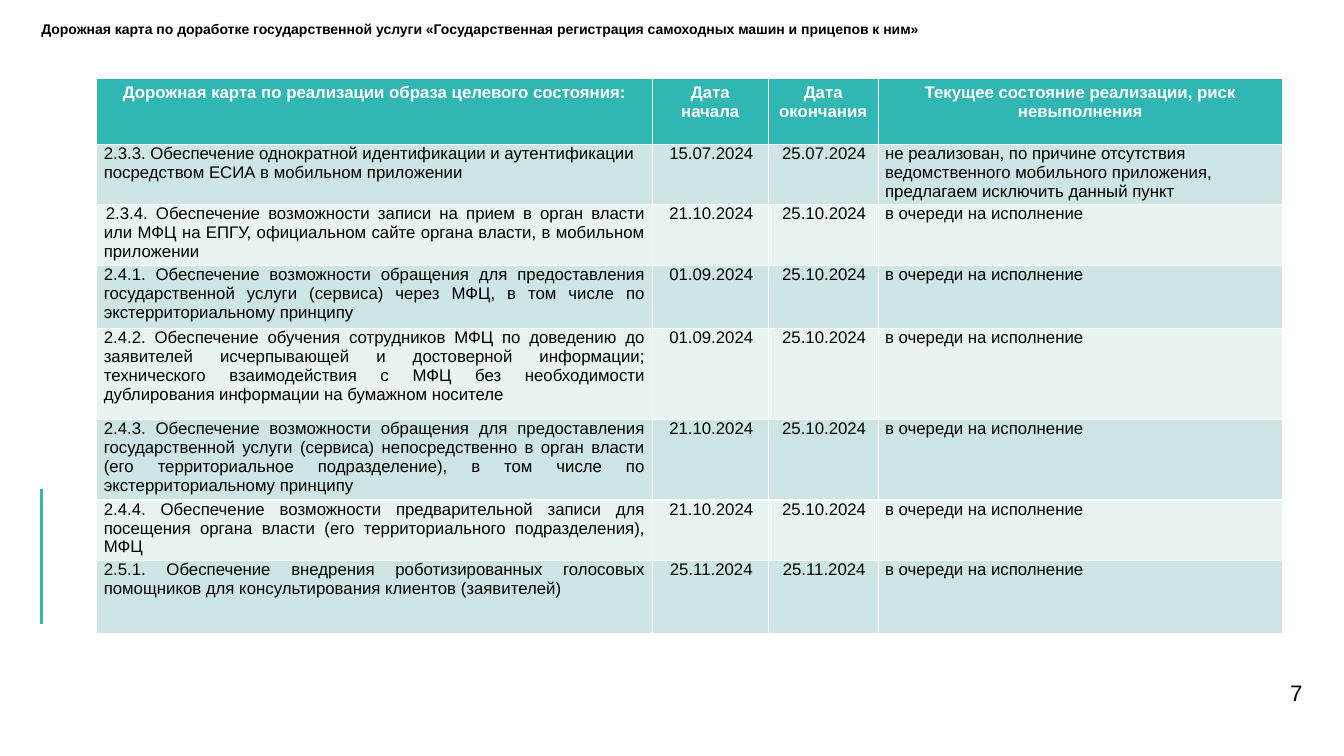
from dataclasses import dataclass

from lxml.etree import SubElement
from pptx import Presentation
from pptx.dml.color import RGBColor
from pptx.enum.shapes import MSO_CONNECTOR
from pptx.enum.text import MSO_ANCHOR, PP_ALIGN
from pptx.oxml.ns import qn
from pptx.util import Inches, Pt


@dataclass(frozen=True)
class Theme:
    font: str = "Arial"
    teal: str = "30B6B3"
    bands: tuple = ("CDE5E5", "E8F3F2")
    dark: str = "000000"
    light: str = "FFFFFF"
    title: int = 10
    table: int = 12
    number: int = 16


THEME = Theme()


def style(par, size, color, bold=False, align=PP_ALIGN.LEFT):
    par.alignment = align
    for run in par.runs:
        run.font.name = THEME.font
        run.font.size = Pt(size)
        run.font.bold = bold
        run.font.color.rgb = RGBColor.from_string(color)


def clear_margins(box):
    box.margin_left = box.margin_right = 0
    box.margin_top = box.margin_bottom = 0


deck = Presentation()
deck.slide_width, deck.slide_height = Inches(13.33), Inches(7.5)
slide = deck.slides.add_slide(deck.slide_layouts[5])

# Title
title = slide.shapes.title
title.left, title.top = Inches(0.41), Inches(0.22)
title.width, title.height = Inches(11.05), Inches(0.39)
frame = title.text_frame
frame.text = ("Дорожная карта по доработке государственной услуги "
              "«Государственная регистрация самоходных машин и прицепов к ним»")
frame.word_wrap = True
frame.vertical_anchor = MSO_ANCHOR.TOP
clear_margins(frame)
frame.paragraphs[0].line_spacing = 0.9
style(frame.paragraphs[0], THEME.title, THEME.dark, bold=True)

# Slide number
number = slide.shapes.add_textbox(Inches(11.86), Inches(6.66), Inches(1.06), Inches(0.43))
frame = number.text_frame
frame.text = "7"
frame.word_wrap = True
frame.vertical_anchor = MSO_ANCHOR.MIDDLE
clear_margins(frame)
style(frame.paragraphs[0], THEME.number, THEME.dark, align=PP_ALIGN.RIGHT)

# Accent line
accent = slide.shapes.add_connector(
    MSO_CONNECTOR.STRAIGHT, Inches(0.41), Inches(4.85), Inches(0.41), Inches(6.19))
accent.line.color.rgb = RGBColor.from_string(THEME.teal)
accent.line.width = Pt(2.25)
SubElement(accent._element.spPr, qn("a:effectLst"))

# Road map table
QUEUED = "в очереди на исполнение"
HEADS = ("Дорожная карта по реализации образа целевого состояния:",
         "Дата\nначала", "Дата окончания",
         "Текущее состояние реализации, риск невыполнения")
STEPS = (
    ("2.3.3. Обеспечение однократной идентификации и аутентификации посредством "
     "ЕСИА в мобильном приложении", "15.07.2024", "25.07.2024",
     "не реализован, по причине отсутствия ведомственного мобильного приложения, "
     "предлагаем исключить данный пункт"),
    ("2.3.4. Обеспечение возможности записи на прием в орган власти или МФЦ на ЕПГУ, "
     "официальном сайте органа власти, в мобильном приложении",
     "21.10.2024", "25.10.2024", QUEUED),
    ("2.4.1. Обеспечение возможности обращения для предоставления государственной "
     "услуги (сервиса) через МФЦ, в том числе по экстерриториальному принципу",
     "01.09.2024", "25.10.2024", QUEUED),
    ("2.4.2. Обеспечение обучения сотрудников МФЦ по доведению до заявителей "
     "исчерпывающей и достоверной информации; технического взаимодействия с МФЦ "
     "без необходимости дублирования информации на бумажном носителе",
     "01.09.2024", "25.10.2024", QUEUED),
    ("2.4.3. Обеспечение возможности обращения для предоставления государственной "
     "услуги (сервиса) непосредственно в орган власти (его территориальное "
     "подразделение), в том числе по экстерриториальному принципу",
     "21.10.2024", "25.10.2024", QUEUED),
    ("2.4.4. Обеспечение возможности предварительной записи для посещения органа "
     "власти (его территориального подразделения), МФЦ",
     "21.10.2024", "25.10.2024", QUEUED),
    ("2.5.1. Обеспечение внедрения роботизированных голосовых помощников для "
     "консультирования клиентов (заявителей)", "25.11.2024", "25.11.2024", QUEUED),
)
WIDTHS = (5.51, 1.15, 1.09, 4.01)
HEIGHTS = (0.65, 0.55, 0.47, 0.63, 0.9, 0.72, 0.5, 0.72)
DATES = (1, 2)

table = slide.shapes.add_table(
    len(HEIGHTS), len(WIDTHS), Inches(0.96), Inches(0.78),
    Inches(sum(WIDTHS)), Inches(sum(HEIGHTS))).table
for column, width in zip(table.columns, WIDTHS):
    column.width = Inches(width)
for row, height in zip(table.rows, HEIGHTS):
    row.height = Inches(height)

for r, texts in enumerate((HEADS, *STEPS)):
    head = r == 0
    fill = THEME.teal if head else THEME.bands[(r - 1) % 2]
    for c, text in enumerate(texts):
        cell = table.cell(r, c)
        cell.text_frame.text = text
        cell.fill.solid()
        cell.fill.fore_color.rgb = RGBColor.from_string(fill)
        if not head:
            cell.margin_left = cell.margin_right = Inches(0.07)
            cell.margin_top = cell.margin_bottom = 0
        if head or c in DATES:
            align = PP_ALIGN.CENTER
        else:
            align = PP_ALIGN.LEFT if r == 1 else PP_ALIGN.JUSTIFY
        for par in cell.text_frame.paragraphs:
            style(par, THEME.table, THEME.light if head else THEME.dark, head, align)
            if not head and c in DATES or (r, c) == (2, 0):
                par._p.get_or_add_pPr().set("indent", str(Inches(0.02)))

deck.save("out.pptx")
